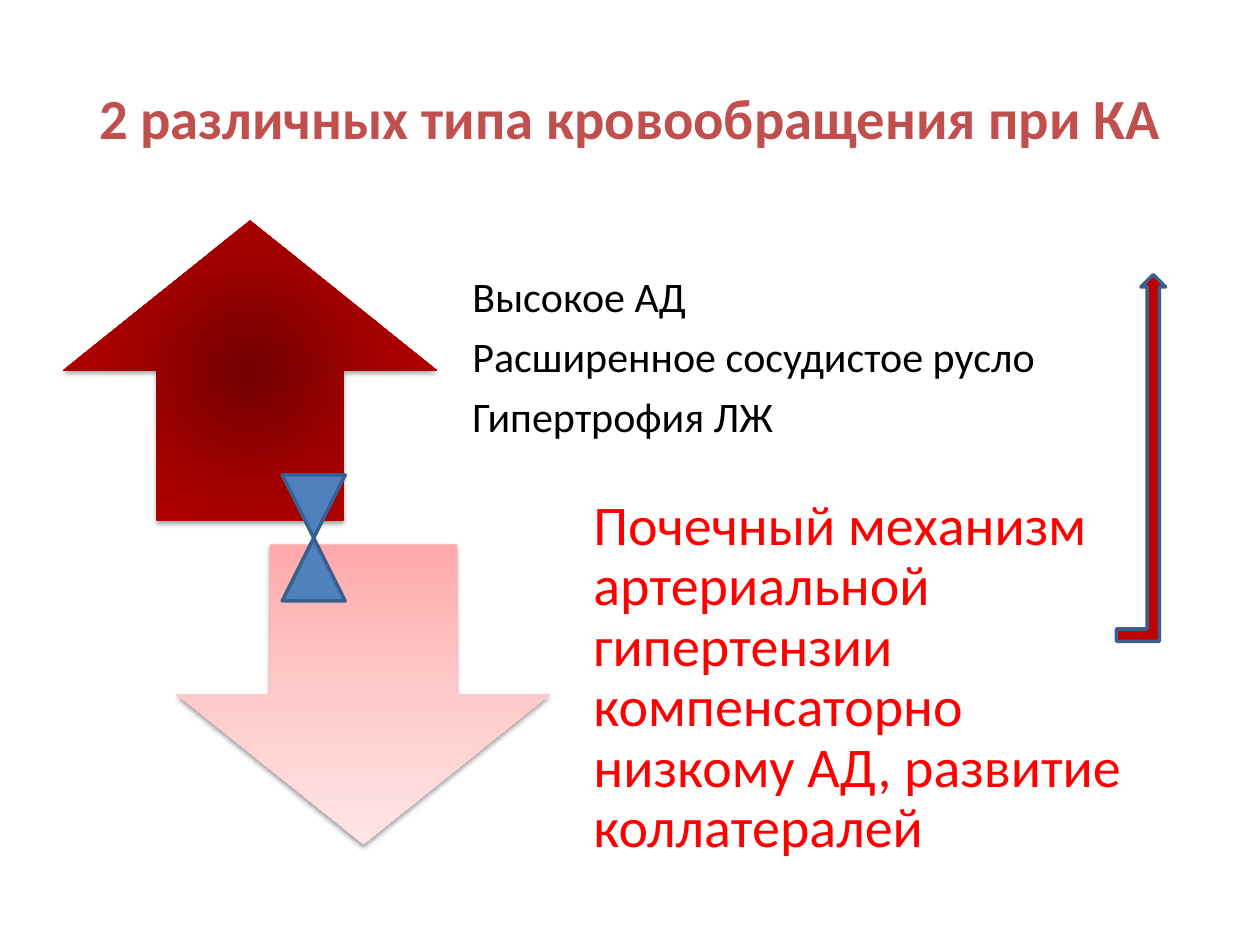
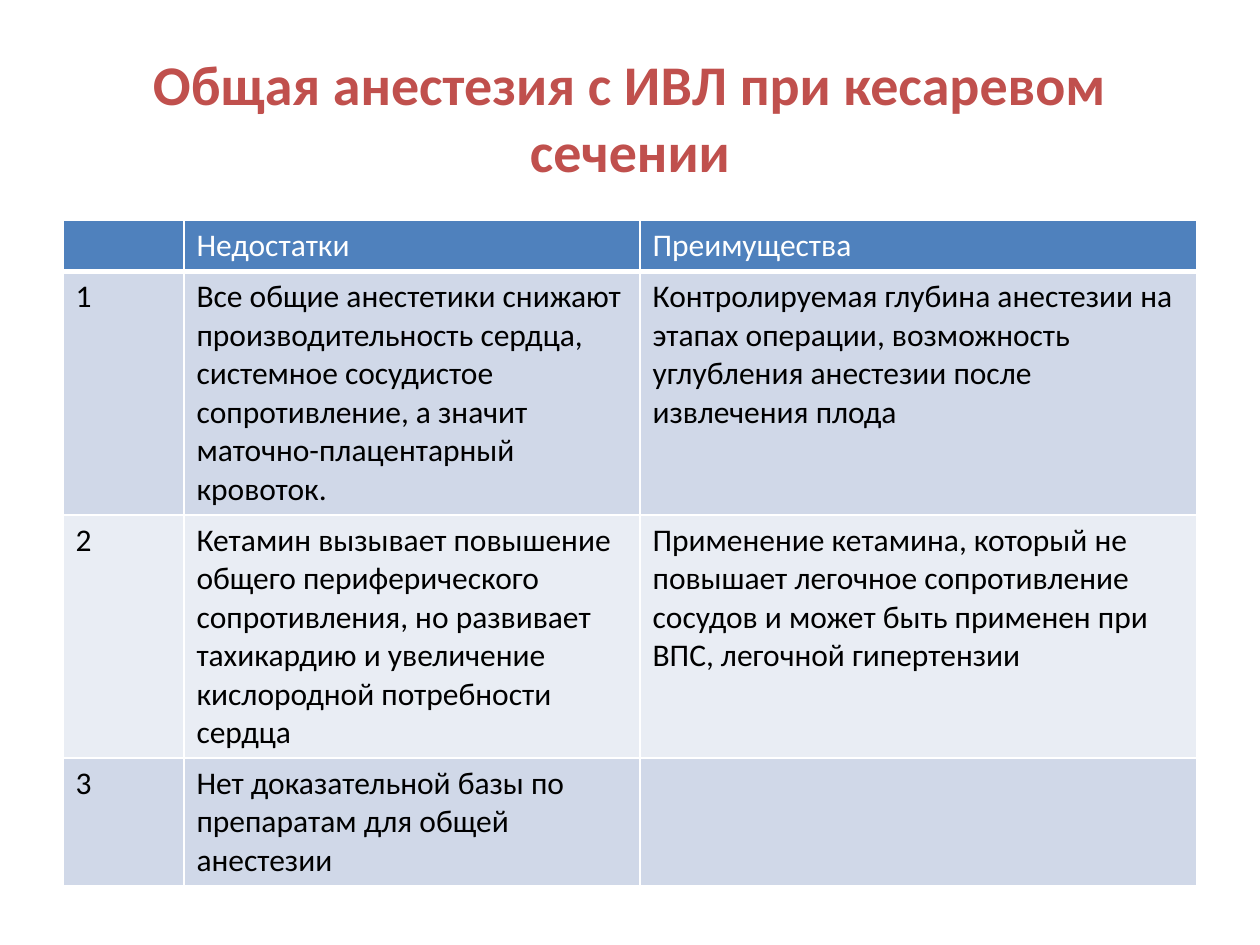
from lxml import etree
from pptx import Presentation
from pptx.dml.color import RGBColor
from pptx.enum.shapes import MSO_SHAPE
from pptx.enum.text import MSO_ANCHOR, PP_ALIGN
from pptx.oxml import parse_xml
from pptx.oxml.ns import qn
from pptx.util import Inches, Pt

UP_ARROW = MSO_SHAPE.UP_ARROW
DOWN_ARROW = MSO_SHAPE.DOWN_ARROW
COLLATE = MSO_SHAPE.FLOWCHART_COLLATE
BENT_UP_ARROW = MSO_SHAPE.BENT_UP_ARROW
MIDDLE = MSO_ANCHOR.MIDDLE
CENTER = PP_ALIGN.CENTER

DRAWING_NAMESPACE = "http://schemas.openxmlformats.org/drawingml/2006/main"
TITLE_ONLY_LAYOUT = 5

FONT = "Calibri"
BLACK, WHITE, RED = "000000", "FFFFFF", "FF0000"
TITLE_RED, DARK_RED = "C0504D", "C00000"
BLUE, BLUE_OUTLINE = "4F81BD", "3A5F8C"
BAND_FILLS = ["D0D8E8", "E9EDF4"]

LEFT, CONTENT_TOP, CONTENT_WIDTH = 0.5, 1.75, 9
RADIAL = ('<a:path path="circle">'
          '<a:fillToRect l="50000" t="50000" r="50000" b="50000"/></a:path>')
DOWNWARD = '<a:lin ang="5400000" scaled="0"/>'


def color(hex_string):
    return RGBColor.from_string(hex_string)


def inches(*values):
    return [Inches(value) for value in values]


class Deck:
    """Holds the presentation, its style and the slide being filled."""

    def __init__(self):
        self.presentation = Presentation()
        self.presentation.slide_width = Inches(10)
        self.presentation.slide_height = Inches(7.5)
        self.slide = None

    def add_run(self, paragraph, text, size, hex_color, bold=False):
        run = paragraph.add_run()
        run.text = text
        run.font.name = FONT
        run.font.size = Pt(size)
        run.font.bold = bold
        run.font.color.rgb = color(hex_color)

    def add_slide(self, title, size=32):
        layout = self.presentation.slide_layouts[TITLE_ONLY_LAYOUT]
        self.slide = self.presentation.slides.add_slide(layout)
        shape = self.slide.shapes.title
        shape.left, shape.top, shape.width, shape.height = inches(
            LEFT, 0.3, CONTENT_WIDTH, 1.25)
        shape.text_frame.vertical_anchor = MIDDLE
        paragraph = shape.text_frame.paragraphs[0]
        paragraph.alignment = CENTER
        self.add_run(paragraph, title, size, TITLE_RED, bold=True)

    def add_shape(self, kind, box, fill=BLUE):
        shape = self.slide.shapes.add_shape(kind, *inches(*box))
        shape.shadow.inherit = False
        shape.fill.solid()
        shape.fill.fore_color.rgb = color(fill)
        shape.line.color.rgb = color(BLUE_OUTLINE)
        shape.line.width = Pt(2)
        return shape

    def add_gradient_arrow(self, kind, box, stops, direction):
        """Add a borderless arrow with evenly spaced stops and a soft shadow."""
        shape = self.add_shape(kind, box)
        shape.line.fill.background()
        properties = shape._element.spPr
        step = 100000 // (len(stops) - 1)
        stop_xml = "".join(
            f'<a:gs pos="{index * step}"><a:srgbClr val="{stop}"/></a:gs>'
            for index, stop in enumerate(stops))
        gradient = parse_xml(
            f'<a:gradFill xmlns:a="{DRAWING_NAMESPACE}" rotWithShape="1">'
            f'<a:gsLst>{stop_xml}</a:gsLst>{direction}</a:gradFill>')
        properties.replace(properties.find(qn("a:solidFill")), gradient)
        shadow = etree.SubElement(
            properties.find(qn("a:effectLst")), qn("a:outerShdw"),
            blurRad=str(Pt(3.1)), dist=str(Pt(1.6)), dir="5400000",
            rotWithShape="0")
        shadow_color = etree.SubElement(shadow, qn("a:srgbClr"), val=BLACK)
        etree.SubElement(shadow_color, qn("a:alpha"), val="38000")

    def add_text(self, box, lines, size, hex_color, inset):
        frame = self.slide.shapes.add_textbox(*inches(*box)).text_frame
        frame.word_wrap = True
        frame.vertical_anchor = MIDDLE
        frame.margin_left = frame.margin_right = Inches(inset)
        frame.margin_top, frame.margin_bottom = inches(0, inset)
        for index, line in enumerate(lines):
            paragraph = frame.add_paragraph() if index else frame.paragraphs[0]
            paragraph.line_spacing = 0.9
            paragraph.space_after = Pt(round(size * 0.35, 1))
            self.add_run(paragraph, line, size, hex_color)

    def add_cell_borders(self, cell, bottom_width):
        properties = cell._tc.get_or_add_tcPr()
        for side, width in zip("LRTB", (1, 1, 1, bottom_width)):
            line = etree.SubElement(
                properties, qn(f"a:ln{side}"), w=str(Pt(width)))
            fill = etree.SubElement(line, qn("a:solidFill"))
            etree.SubElement(fill, qn("a:srgbClr"), val=WHITE)

    def add_table(self, rows, column_widths, row_heights):
        table = self.slide.shapes.add_table(
            len(rows), len(column_widths), *inches(
                LEFT, CONTENT_TOP, CONTENT_WIDTH, sum(row_heights))).table
        for column, width in zip(table.columns, column_widths):
            column.width = Inches(width)
        for row_index, texts in enumerate(rows):
            table.rows[row_index].height = Inches(row_heights[row_index])
            is_header = row_index == 0
            fill = BLUE if is_header else BAND_FILLS[(row_index - 1) % 2]
            for column_index, text in enumerate(texts):
                cell = table.cell(row_index, column_index)
                self.add_cell_borders(cell, 3 if is_header else 1)
                cell.fill.solid()
                cell.fill.fore_color.rgb = color(fill)
                if text:
                    self.add_run(cell.text_frame.paragraphs[0], text, 18,
                                 WHITE if is_header else BLACK)


def add_circulation_slide(deck):
    arrow_width, text_width, height = 2.97, 5.04, 2.38
    lower_top = 4.32
    deck.add_slide("2 различных типа кровообращения при КА", 32.4)
    deck.add_gradient_arrow(
        UP_ARROW, (LEFT, CONTENT_TOP, arrow_width, height),
        ["720000", "A20000", DARK_RED], RADIAL)
    deck.add_text(
        (3.56, CONTENT_TOP, text_width, height),
        ["Высокое АД", "Расширенное сосудистое русло", "Гипертрофия ЛЖ"],
        24, BLACK, 0.19)
    deck.add_gradient_arrow(
        DOWN_ARROW, (1.4, lower_top, arrow_width, height),
        ["FFA9A9", "FFCACA", "FFE5E5"], DOWNWARD)
    deck.add_text(
        (4.46, lower_top, text_width, height),
        ["Почечный механизм артериальной гипертензии компенсаторно "
         "низкому АД, развитие коллатералей"],
        32, RED, 0.25)
    deck.add_shape(COLLATE, (2.24, 3.77, 0.5, 1))
    deck.add_shape(BENT_UP_ARROW, (8.86, 2.18, 0.39, 2.91), DARK_RED)


def add_anesthesia_slide(deck):
    deck.add_slide("Общая анестезия с ИВЛ при кесаревом сечении")
    rows = [
        ("", "Недостатки", "Преимущества"),
        ("1",
         "Все общие анестетики снижают производительность сердца, системное "
         "сосудистое сопротивление, а значит маточно-плацентарный кровоток.",
         "Контролируемая глубина анестезии на этапах операции, возможность "
         "углубления анестезии после извлечения плода"),
        ("2",
         "Кетамин вызывает повышение общего периферического сопротивления, "
         "но развивает тахикардию и увеличение кислородной потребности сердца",
         "Применение кетамина, который не повышает легочное сопротивление "
         "сосудов и может быть применен при ВПС, легочной гипертензии"),
        ("3", "Нет доказательной базы по препаратам для общей анестезии", ""),
    ]
    deck.add_table(rows, [0.96, 3.62, 4.42], [0.4, 1.93, 1.93, 1])


def main():
    deck = Deck()
    add_circulation_slide(deck)
    add_anesthesia_slide(deck)
    deck.presentation.save("out.pptx")


if __name__ == "__main__":
    main()
